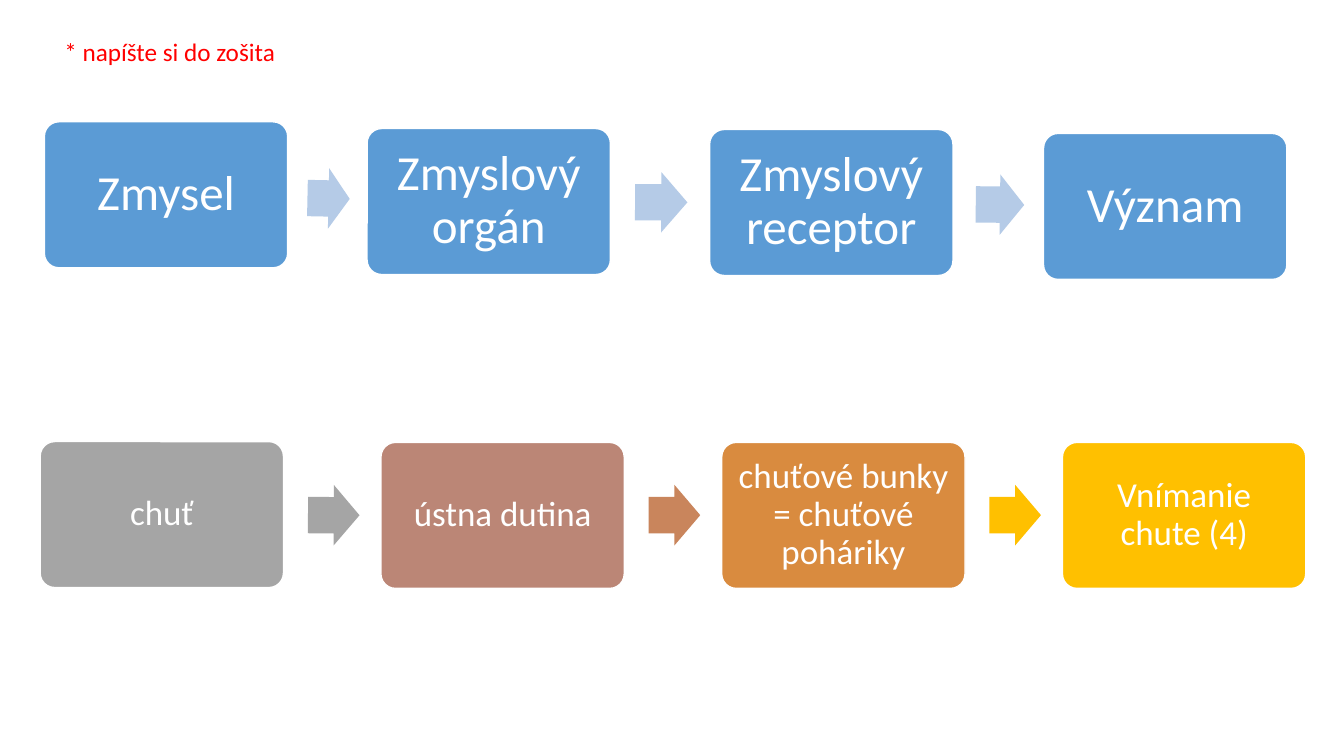
from dataclasses import dataclass

from pptx import Presentation
from pptx.dml.color import RGBColor
from pptx.enum import shapes, text
from pptx.util import Pt

HEX = {
    "white": "FFFFFF", "red": "FF0000", "blue": "5B9BD5", "pale": "B5CBE7",
    "gray": "A5A5A5", "rose": "BB8676", "clay": "C9855C",
    "amber": "D98B3F", "gold": "FFC000",
}
FONT = "Calibri"
BOX_W, BOX_H, TIP_H = 173.8, 104.3, 43.2  # points


@dataclass
class Box:
    words: str
    left: float
    top: float
    fill: str
    size: float
    inset: float


@dataclass
class Arrow:
    left: float
    top: float
    width: float
    fill: str
    turn: float = 0


def color(name: str) -> RGBColor:
    return RGBColor.from_string(HEX[name])


def write(frame, words: str, *, size: float, ink: str, align=None, lead=None) -> None:
    para = frame.paragraphs[0]
    para.alignment = align
    para.line_spacing = lead
    run = para.add_run()
    run.text = words
    run.font.name = FONT
    run.font.size = Pt(size)
    run.font.color.rgb = color(ink)


def add_form(slide, kind, left: float, top: float, width: float, height: float, fill: str):
    form = slide.shapes.add_shape(kind, Pt(left), Pt(top), Pt(width), Pt(height))
    form.shadow.inherit = False
    form.fill.solid()
    form.fill.fore_color.rgb = color(fill)
    return form


def draw_box(slide, box: Box) -> None:
    form = add_form(slide, shapes.MSO_SHAPE.ROUNDED_RECTANGLE,
                    box.left, box.top, BOX_W, BOX_H, box.fill)
    form.adjustments[0] = 0.1
    form.line.color.rgb = color("white")
    form.line.width = Pt(1)
    frame = form.text_frame
    frame.word_wrap = True
    frame.vertical_anchor = text.MSO_ANCHOR.MIDDLE
    frame.margin_left = frame.margin_right = Pt(box.inset)
    frame.margin_top = frame.margin_bottom = Pt(box.inset)
    write(frame, box.words, size=box.size, ink="white",
          align=text.PP_ALIGN.CENTER, lead=0.9)


def draw_arrow(slide, arrow: Arrow) -> None:
    form = add_form(slide, shapes.MSO_SHAPE.RIGHT_ARROW,
                    arrow.left, arrow.top, arrow.width, TIP_H, arrow.fill)
    form.adjustments[0] = 0.6
    form.adjustments[1] = 0.5
    form.line.fill.background()
    form.rotation = arrow.turn


def draw_note(slide) -> None:
    note = slide.shapes.add_textbox(Pt(38.9), Pt(22.3), Pt(167), Pt(28.8))
    frame = note.text_frame
    frame.word_wrap = False
    frame.auto_size = text.MSO_AUTO_SIZE.SHAPE_TO_FIT_TEXT
    write(frame, "* napíšte si do zošita", size=18, ink="red")


# Heading row: boxes step down slightly to the right
HEADS = [
    Box(words, left, top, "blue", 35, 10.8)
    for words, left, top in (
        ("Zmysel", 31.7, 87),
        ("Zmyslový orgán", 262.2, 91.8),
        ("Zmyslový receptor", 506.9, 92.5),
        ("Význam", 745.4, 95.3),
    )
]
HEAD_TIPS = [
    Arrow(219.6, 120.2, 30.2, "pale", 1.2),
    Arrow(453.6, 122.9, 37.4, "pale", 0.2),
    Arrow(697, 124.6, 34.6, "pale", 0.7),
]

# Example row: equal steps
STEP = 243.4
TASTE = [
    Box(words, 28.7 + i * STEP, 316 if i else 315.4, fill, 25, 6.8)
    for i, (words, fill) in enumerate((
        ("chuť", "gray"),
        ("ústna dutina", "rose"),
        ("chuťové bunky = chuťové poháriky", "amber"),
        ("Vnímanie chute (4)", "gold"),
    ))
]
TASTE_TIPS = [
    Arrow(220 + i * STEP, 346.4, 36.8, fill, turn)
    for i, (fill, turn) in enumerate((("gray", 0.2), ("clay", 0), ("gold", 0)))
]


def main() -> None:
    deck = Presentation()
    deck.slide_width, deck.slide_height = Pt(960), Pt(540)
    slide = deck.slides.add_slide(deck.slide_layouts[6])
    draw_note(slide)
    for box in HEADS + TASTE:
        draw_box(slide, box)
    for arrow in HEAD_TIPS + TASTE_TIPS:
        draw_arrow(slide, arrow)
    deck.save("out.pptx")


if __name__ == "__main__":
    main()
